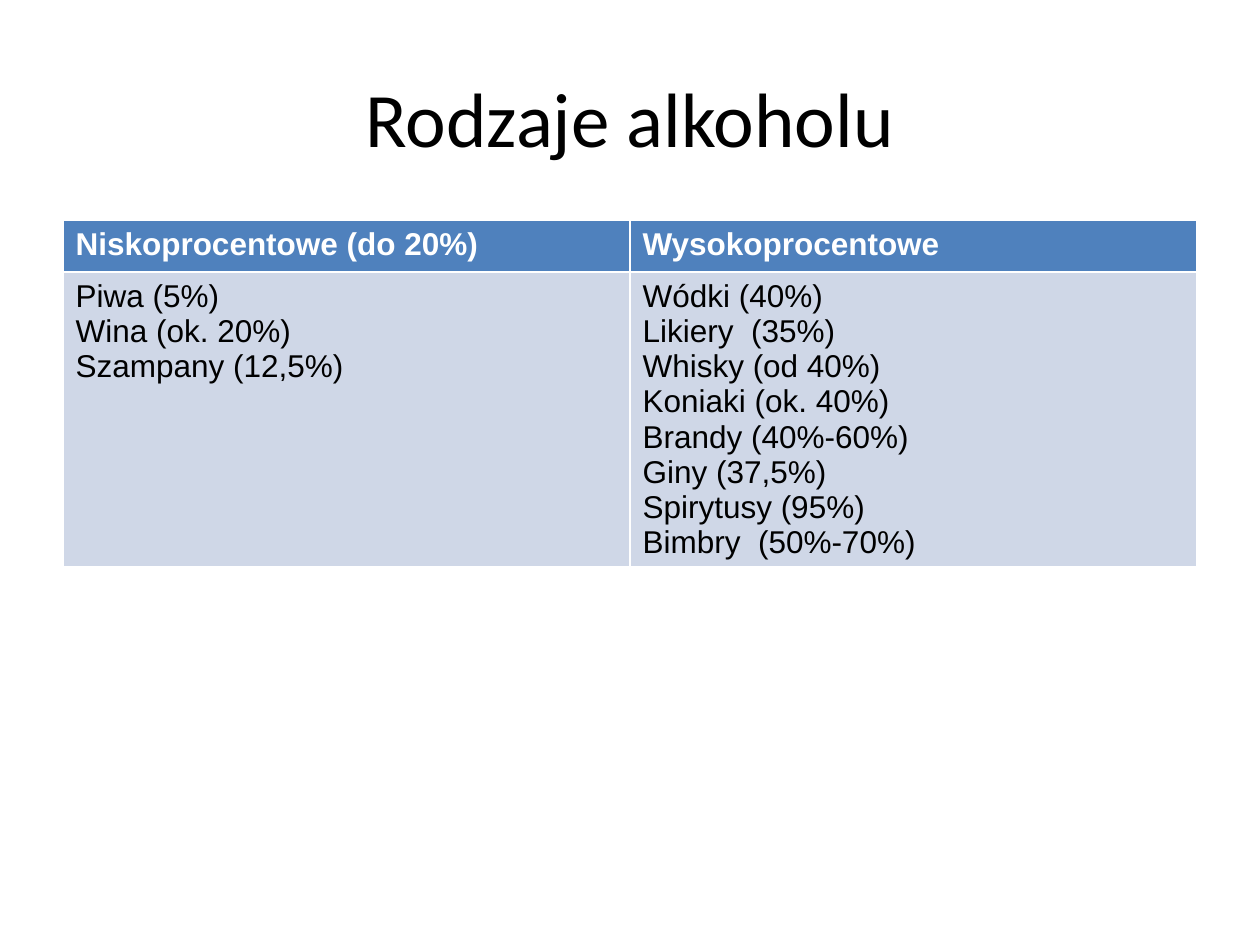
"""Build a slide that lists kinds of alcohol by strength in a two-column table."""
from typing import NamedTuple

from pptx import Presentation
from pptx.dml.color import RGBColor
from pptx.enum.text import MSO_ANCHOR, PP_ALIGN
from pptx.util import Inches, Pt

WHITE = RGBColor(0xFF, 0xFF, 0xFF)
BLACK = RGBColor(0x00, 0x00, 0x00)
BLUE = RGBColor(0x4F, 0x81, 0xBD)
PALE_BLUE = RGBColor(0xCF, 0xD7, 0xE7)

WIDTH, HEIGHT = Inches(10), Inches(7.5)
MARGIN = int(WIDTH * 0.05)
CONTENT_W = WIDTH - 2 * MARGIN
ROW_H = Inches(0.41)


class Column(NamedTuple):
    header: str
    drinks: list[str]


class Style(NamedTuple):
    size: int
    font: str
    color: RGBColor
    bold: bool = False


TITLE = Style(44, "Calibri", BLACK)
HEADER = Style(18, "Arial", WHITE, True)
BODY = Style(18, "Arial", BLACK)

COLUMNS = [
    Column("Niskoprocentowe (do 20%)",
           ["Piwa (5%)", "Wina (ok. 20%)", "Szampany (12,5%)"]),
    Column("Wysokoprocentowe",
           ["Wódki (40%)", "Likiery  (35%)", "Whisky (od 40%)", "Koniaki (ok. 40%)",
            "Brandy (40%-60%)", "Giny (37,5%)", "Spirytusy (95%)", "Bimbry  (50%-70%)"]),
]


def write(tf, text: str, style: Style) -> None:
    """Set the text of a frame and format its runs."""
    tf.text = text
    for p in tf.paragraphs:
        for r in p.runs:
            r.font.size, r.font.name, r.font.bold = Pt(style.size), style.font, style.bold
            r.font.color.rgb = style.color


def fill_cell(cell, text: str, style: Style, color: RGBColor) -> None:
    """Write a table cell and colour its background."""
    write(cell.text_frame, text, style)
    cell.fill.solid()
    cell.fill.fore_color.rgb = color


def add_title(slide, text: str) -> None:
    """Place and format the title placeholder."""
    sp = slide.shapes.title
    sp.left, sp.top = MARGIN, int(HEIGHT * 0.04)
    sp.width, sp.height = CONTENT_W, HEIGHT // 6
    write(sp.text_frame, text, TITLE)
    sp.text_frame.vertical_anchor = MSO_ANCHOR.MIDDLE
    sp.text_frame.paragraphs[0].alignment = PP_ALIGN.CENTER


def add_drinks_table(slide, columns: list[Column]) -> None:
    """Draw one table column per group of drinks."""
    frame = slide.shapes.add_table(2, len(columns), MARGIN, Inches(1.75), CONTENT_W, 2 * ROW_H)
    for i, column in enumerate(columns):
        fill_cell(frame.table.cell(0, i), column.header, HEADER, BLUE)
        fill_cell(frame.table.cell(1, i), "\n".join(column.drinks), BODY, PALE_BLUE)
    frame.height = Inches(2.91)


def main() -> None:
    """Create the presentation and save it."""
    prs = Presentation()
    prs.slide_width, prs.slide_height = WIDTH, HEIGHT
    slide = prs.slides.add_slide(prs.slide_layouts[5])
    add_title(slide, "Rodzaje alkoholu")
    add_drinks_table(slide, COLUMNS)
    prs.save("out.pptx")


if __name__ == "__main__":
    main()
